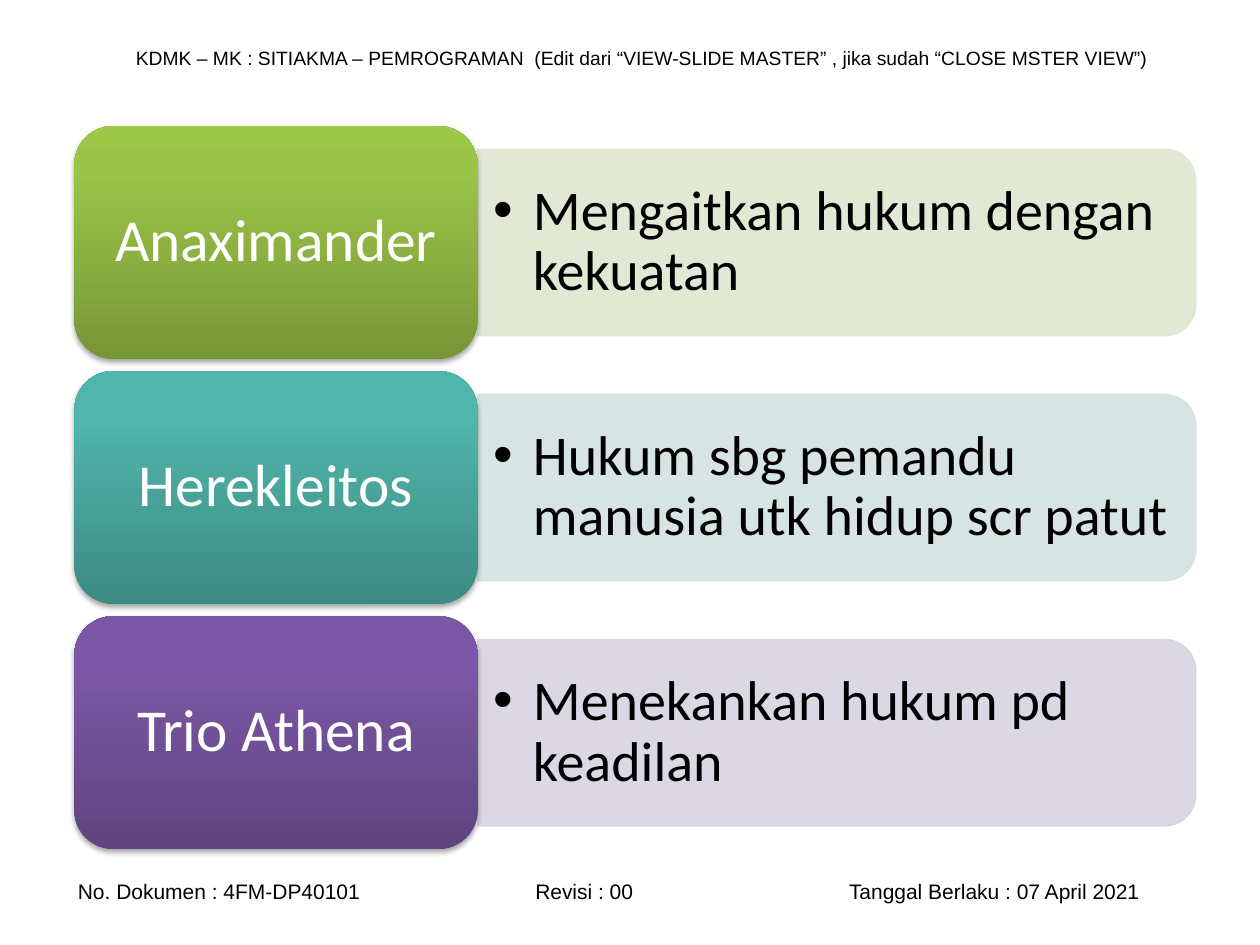
"""Build a slide that pairs three Greek thinkers with their view of law."""
from dataclasses import dataclass

from lxml.etree import SubElement
from pptx import Presentation
from pptx.dml.color import RGBColor
from pptx.enum.shapes import MSO_SHAPE
from pptx.enum.text import MSO_ANCHOR, MSO_AUTO_SIZE, PP_ALIGN
from pptx.oxml.ns import qn
from pptx.util import Inches, Pt

TOP, PITCH = 1, 1.945
LABEL_LEFT, LABEL_W, LABEL_H = 0.59, 3.2, 1.85
BAR_W, BAR_H = 5.7, 1.48
BAR_LEFT = LABEL_LEFT + LABEL_W


@dataclass
class Thinker:
    name: str
    idea: str
    tint: str
    stops: tuple[tuple[int, str], ...]


THINKERS = [
    Thinker("Anaximander", "Mengaitkan hukum dengan kekuatan", "DEE7D1",
            ((0, "779737"), (80, "9BC348"), (100, "9DC746"))),
    Thinker("Herekleitos", "Hukum sbg pemandu manusia utk hidup scr patut", "D2E3E2",
            ((0, "3D8B83"), (80, "50B5AA"), (100, "4EB8AC"))),
    Thinker("Trio Athena", "Menekankan hukum pd keadilan", "D8D3E0",
            ((0, "5F4480"), (80, "7B58A6"), (100, "7C57A8"))),
]


def color(value: str) -> RGBColor:
    """Turn a hex string into a colour."""
    return RGBColor.from_string(value)


def add_color(parent, value: str, alpha: int = 100) -> None:
    """Append a colour with its opacity in percent to an XML element."""
    clr = SubElement(parent, qn("a:srgbClr"), val=str(color(value)))
    if alpha < 100:
        SubElement(clr, qn("a:alpha"), val=str(alpha * 1000))


def write(s, text: str, size: float, font: str, ink: str, inset: float, align: PP_ALIGN):
    """Write one middle-anchored paragraph and return it."""
    tf = s.text_frame
    tf.word_wrap = True
    tf.vertical_anchor = MSO_ANCHOR.MIDDLE
    tf.margin_left = tf.margin_right = Inches(inset)
    p = tf.paragraphs[0]
    p.alignment = align
    r = p.add_run()
    r.text = text
    r.font.size = Pt(size)
    r.font.name = font
    r.font.color.rgb = color(ink)
    return p


def add_textbox(slide, left: float, top: float, width: float, height: float):
    """Add an empty text box measured in inches."""
    return slide.shapes.add_textbox(Inches(left), Inches(top), Inches(width), Inches(height))


def add_page_line(slide, left: float, top: float, width: float, height: float,
                  parts: list[str], size: float, tabs: tuple[float, ...] = ()) -> None:
    """Add a header or footer line whose parts stand at tab stops."""
    s = add_textbox(slide, left, top, width, height)
    p = write(s, "\t".join(parts), size, "Arial", "000000", 0.1, PP_ALIGN.JUSTIFY)
    s.text_frame.auto_size = MSO_AUTO_SIZE.SHAPE_TO_FIT_TEXT
    if tabs:
        tab_list = SubElement(p._p.get_or_add_pPr(), qn("a:tabLst"))
        for pos in tabs:
            SubElement(tab_list, qn("a:tab"), pos=str(Inches(pos)), algn="l")


def add_bar(slide, thinker: Thinker, middle: float) -> None:
    """Add the tinted bar and its bulleted idea."""
    s = slide.shapes.add_shape(
        MSO_SHAPE.ROUND_2_SAME_RECTANGLE, Inches(BAR_LEFT + (BAR_W - BAR_H) / 2),
        Inches(middle - BAR_W / 2), Inches(BAR_H), Inches(BAR_W))
    s.rotation = 90
    s.shadow.inherit = False
    s.line.width = Pt(0.75)
    for paint in (s.fill, s.line.fill):
        paint.solid()
    for solid in s._element.spPr.iter(qn("a:solidFill")):
        for old in list(solid):
            solid.remove(old)
        add_color(solid, thinker.tint, 90)

    box = add_textbox(slide, BAR_LEFT, middle - 0.67, 5.62, 1.34)
    p = write(box, thinker.idea, 32, "Calibri", "000000", 0.13, PP_ALIGN.LEFT)
    p.level = 1
    p.line_spacing = 0.9
    pPr = p._p.get_or_add_pPr()
    pPr.set("marL", str(Inches(0.31)))
    pPr.set("indent", str(Inches(-0.31)))
    SubElement(pPr, qn("a:buFont"), typeface="Arial")
    SubElement(pPr, qn("a:buChar"), char="•")


def add_label(slide, thinker: Thinker, middle: float) -> None:
    """Add the shaded name label."""
    s = slide.shapes.add_shape(
        MSO_SHAPE.ROUNDED_RECTANGLE, Inches(LABEL_LEFT), Inches(middle - LABEL_H / 2),
        Inches(LABEL_W), Inches(LABEL_H))
    s.line.fill.background()
    s.fill.gradient()
    s.fill.gradient_angle = 90
    spPr = s._element.spPr
    stops = spPr.find(qn("a:gradFill")).find(qn("a:gsLst"))
    for old in list(stops):
        stops.remove(old)
    for pos, value in thinker.stops:
        add_color(SubElement(stops, qn("a:gs"), pos=str(pos * 1000)), value)
    s.shadow.inherit = False
    shadow = SubElement(spPr.find(qn("a:effectLst")), qn("a:outerShdw"), blurRad=str(Pt(3.1)),
                        dist=str(Pt(1.8)), dir="5400000", rotWithShape="0")
    add_color(shadow, "000000", 35)
    p = write(s, thinker.name, 34, "Calibri", "FFFFFF", 0.23, PP_ALIGN.CENTER)
    p.line_spacing = 0.9


def main() -> None:
    """Build and save the slide."""
    prs = Presentation()
    prs.slide_width, prs.slide_height = Inches(10), Inches(7.5)
    slide = prs.slides.add_slide(prs.slide_layouts[6])
    add_page_line(slide, 0.98, 0.31, 8.35, 0.29, [
        "KDMK – MK : SITIAKMA – PEMROGRAMAN  "
        "(Edit dari “VIEW-SLIDE MASTER” , jika sudah “CLOSE MSTER VIEW”)"], 11)
    add_page_line(slide, 0.52, 6.92, 9.13, 0.3, [
        "No. Dokumen : 4FM-DP40101", "Revisi : 00", "Tanggal Berlaku : 07 April 2021"],
        12, (3.63, 6.12))
    for i, thinker in enumerate(THINKERS):
        middle = TOP + LABEL_H / 2 + i * PITCH
        add_bar(slide, thinker, middle)
        add_label(slide, thinker, middle)
    prs.save("out.pptx")


if __name__ == "__main__":
    main()
